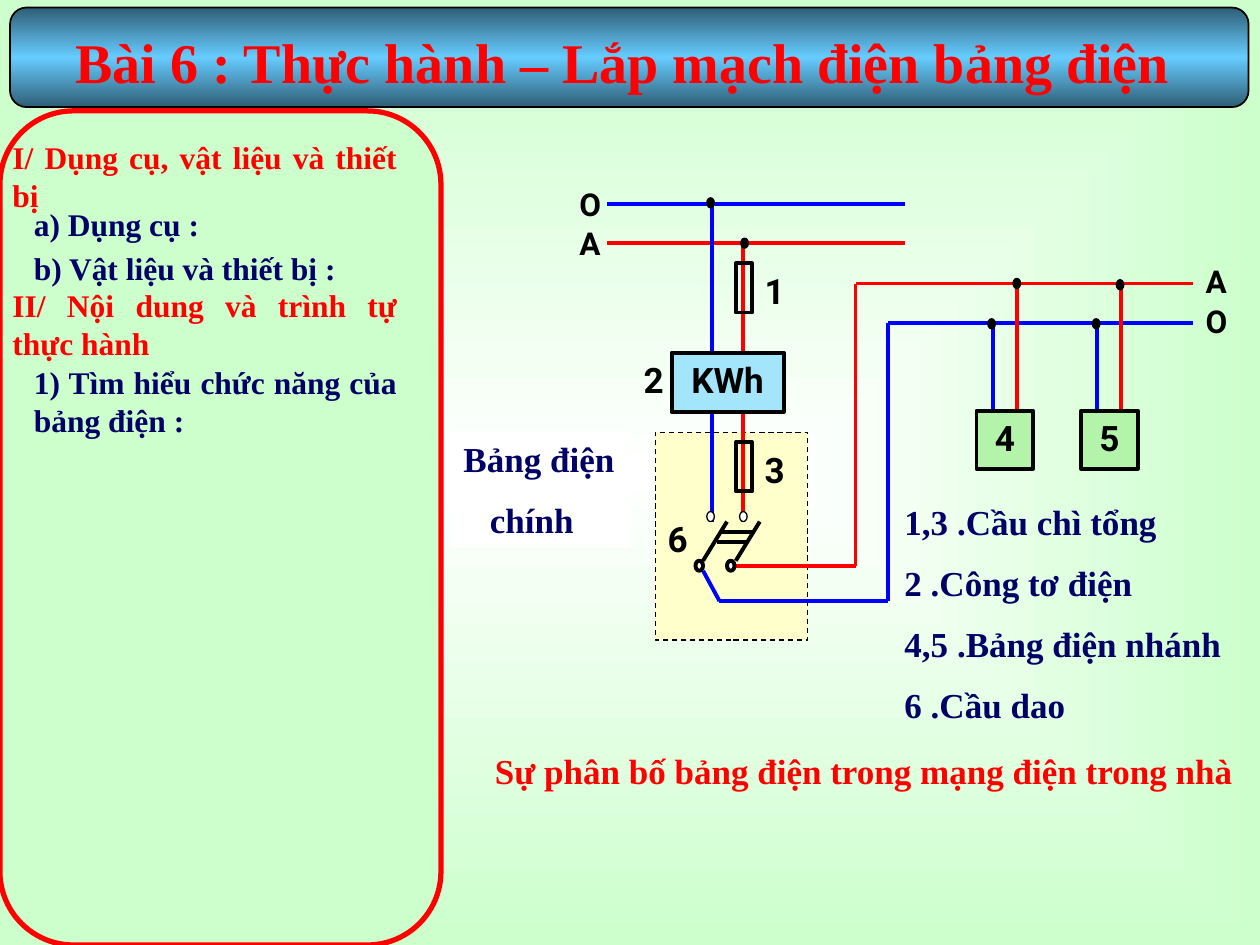
import copy
import pptx
import pptx.util
import pptx.dml.color
import pptx.enum.dml
import pptx.enum.shapes
import pptx.enum.text
import pptx.oxml.ns
from lxml import etree

RGBColor = pptx.dml.color.RGBColor
BLACK = RGBColor(0x00, 0x00, 0x00)
WHITE = RGBColor(0xFF, 0xFF, 0xFF)
RED = RGBColor(0xFF, 0x00, 0x00)
BLUE = RGBColor(0x00, 0x00, 0xFF)
NAVY = RGBColor(0x00, 0x00, 0x66)
PALE_GREEN = RGBColor(0xCC, 0xFF, 0xCC)
BRANCH_GREEN = RGBColor(0xB3, 0xF4, 0xAA)
METER_BLUE = RGBColor(0xA3, 0xE6, 0xFB)
BOARD_YELLOW = RGBColor(0xFF, 0xFF, 0xCC)
TITLE_DARK = RGBColor(0x2F, 0x5E, 0x76)
TITLE_LIGHT = RGBColor(0x66, 0xCC, 0xFF)
SERIF, SANS = "Times New Roman", "Roboto"
LEFT = pptx.enum.text.PP_ALIGN.LEFT
CENTER = pptx.enum.text.PP_ALIGN.CENTER
JUSTIFY = pptx.enum.text.PP_ALIGN.JUSTIFY
PRESET = pptx.enum.shapes.MSO_SHAPE

presentation = pptx.Presentation()
presentation.slide_width = pptx.util.Inches(10)
presentation.slide_height = pptx.util.Inches(7.5)
column = presentation.slide_width / 100
row = presentation.slide_height / 75
slide = presentation.slides.add_slide(presentation.slide_layouts[6])


def add_box(preset, left, top, width, height, fill, line, weight):
    shape = slide.shapes.add_shape(preset, int(left * column), int(top * row),
                                   int(width * column), int(height * row))
    shape.shadow.inherit = False
    if fill is None:
        shape.fill.background()
    else:
        shape.fill.solid()
        shape.fill.fore_color.rgb = fill
    shape.line.color.rgb = line
    shape.line.width = pptx.util.Pt(weight)
    return shape


def write(shape, lines, size, font, color, alignment=LEFT, indents=(0,)):
    frame = shape.text_frame
    frame.word_wrap = True
    frame.vertical_anchor = pptx.enum.text.MSO_ANCHOR.TOP
    for index, line in enumerate(lines):
        paragraph = frame.add_paragraph() if index else frame.paragraphs[0]
        paragraph.alignment = alignment
        paragraph.space_before = pptx.util.Pt(size * 0.55 if index else 0)
        indent = indents[index % len(indents)]
        if indent:
            paragraph._p.get_or_add_pPr().set("marL", str(int(indent * column)))
        run = paragraph.add_run()
        run.text = line
        run.font.size = pptx.util.Pt(size)
        run.font.name = font
        run.font.bold = True
        run.font.color.rgb = color


background = slide.background.fill
background.gradient()
for stop, color in zip(background.gradient_stops, (WHITE, PALE_GREEN)):
    stop.color.rgb = color
gradient = slide.background._cSld.find(".//" + pptx.oxml.ns.qn("a:gradFill"))
gradient.remove(gradient.find(pptx.oxml.ns.qn("a:lin")))
gradient_shape = etree.SubElement(gradient, pptx.oxml.ns.qn("a:path"))
gradient_shape.set("path", "shape")
center = etree.SubElement(gradient_shape, pptx.oxml.ns.qn("a:fillToRect"))
for side in "ltrb":
    center.set(side, "50000")

banner = add_box(PRESET.ROUNDED_RECTANGLE, 0.8, 0.6, 98.3, 7.9, TITLE_LIGHT, BLACK, 1)
banner.fill.gradient()
stop_list = banner._element.spPr.find(".//" + pptx.oxml.ns.qn("a:gsLst"))
stop_list.append(copy.deepcopy(stop_list[-1]))
for stop, color, position in zip(banner.fill.gradient_stops,
                                 (TITLE_DARK, TITLE_LIGHT, TITLE_DARK), (0, 0.5, 1)):
    stop.color.rgb = color
    stop.position = position
banner.fill.gradient_angle = 90
add_box(PRESET.ROUNDED_RECTANGLE, 0, 8.8, 35, 66.2, PALE_GREEN, RED, 3)

board = add_box(PRESET.RECTANGLE, 52, 34.3, 12.1, 16.5, BOARD_YELLOW, BLACK, 0.75)
board.line.dash_style = pptx.enum.dml.MSO_LINE.DASH

neutral, live = 56.5, 59
mains_neutral, mains_live = 16.2, 19.3
branch_live, branch_neutral = 22.5, 25.6
meter_top, meter_bottom = 28, 32.7
blade_top, blade_bottom = 41.4, 44.5
branch_lefts = (77.5, 85.8)
wires = [
    (BLUE, [(48.2, mains_neutral), (71.8, mains_neutral)]),
    (RED, [(48.2, mains_live), (71.8, mains_live)]),
    (BLUE, [(neutral, mains_neutral), (neutral, meter_top)]),
    (RED, [(live, mains_live), (live, meter_top)]),
    (BLUE, [(neutral, meter_bottom), (neutral, blade_top)]),
    (RED, [(live, meter_bottom), (live, blade_top)]),
    (BLACK, [(55.8, blade_bottom), (57.7, blade_top)]),
    (BLACK, [(58.4, blade_bottom), (60.3, blade_top)]),
    (BLACK, [(57.2, 42.2), (59.8, 42.2)]),
    (BLACK, [(56.9, 43), (59.4, 43)]),
    (RED, [(58.4, 44.9), (67.9, 44.9), (67.9, branch_live), (94.7, branch_live)]),
    (BLUE, [(55.8, 45.3), (57.1, 47.7), (70.5, 47.7),
            (70.5, branch_neutral), (94.7, branch_neutral)]),
]
for left in branch_lefts:
    wires.append((BLUE, [(left + 1.3, branch_neutral), (left + 1.3, meter_bottom)]))
    wires.append((RED, [(left + 3.2, branch_live), (left + 3.2, meter_bottom)]))
for color, points in wires:
    for start, end in zip(points, points[1:]):
        wire = slide.shapes.add_connector(
            pptx.enum.shapes.MSO_CONNECTOR.STRAIGHT,
            int(start[0] * column), int(start[1] * row),
            int(end[0] * column), int(end[1] * row))
        wire.line.color.rgb = color
        wire.line.width = pptx.util.Pt(2.25)
        etree.SubElement(wire._element.spPr, pptx.oxml.ns.qn("a:effectLst"))

meter = add_box(PRESET.RECTANGLE, 53.3, meter_top, 8.9, 4.7, METER_BLUE, BLACK, 2.25)
write(meter, ["KWh"], 20, SANS, BLACK, CENTER)
for number, left in zip("45", branch_lefts):
    branch = add_box(PRESET.RECTANGLE, left, 32.6, 4.5, 4.6, BRANCH_GREEN, BLACK, 2.25)
    write(branch, [number], 20, SANS, BLACK, CENTER)
for top in (20.9, 35.1):
    add_box(PRESET.RECTANGLE, 58.4, top, 1.3, 3.9, None, BLACK, 2.25)

dots = [
    (55.2, 44.5, WHITE, 2.25), (57.7, 44.5, WHITE, 2.25),
    (56.1, 40.6, WHITE, 0.75), (58.7, 40.6, WHITE, 0.75),
    (56.1, 15.7, BLACK, 0.75), (58.8, 18.9, BLACK, 0.75),
    (80.4, 22.1, BLACK, 0.75), (88.6, 22.2, BLACK, 0.75),
    (78.4, 25.3, BLACK, 0.75), (86.7, 25.3, BLACK, 0.75),
]
for left, top, fill, weight in dots:
    add_box(PRESET.OVAL, left, top, 0.6, 0.8, fill, BLACK, weight)

texts = [
    (1.7, 1.7, 98.3, 6.3, ["Bài 6 : Thực hành – Lắp mạch điện bảng điện"], 32, SERIF, RED, JUSTIFY, (3.3,)),
    (0, 10.5, 32.5, 7, ["I/ Dụng cụ, vật liệu và thiết bị"], 18, SERIF, RED, JUSTIFY),
    (1.7, 15.8, 21.7, 4, ["a) Dụng cụ :"], 18, SERIF, NAVY),
    (1.7, 19.3, 26.7, 4, ["b) Vật liệu và thiết bị :"], 18, SERIF, NAVY),
    (0, 22.2, 32.5, 7, ["II/ Nội dung và trình tự thực hành"], 18, SERIF, RED, JUSTIFY),
    (1.7, 28.3, 30.8, 7, ["1) Tìm hiểu chức năng của bảng điện :"], 18, SERIF, NAVY, JUSTIFY),
    (59.7, 20.9, 3.2, 4.3, ["1"], 20, SANS, BLACK),
    (50.1, 28, 3.8, 4.3, ["2"], 20, SANS, BLACK),
    (59.7, 35.1, 2.5, 4.3, ["3"], 20, SANS, BLACK),
    (52, 40.6, 3.8, 4.3, ["6"], 20, SANS, BLACK),
    (45, 14.2, 3.8, 4, ["O"], 18, SANS, BLACK),
    (45, 17.3, 4.5, 4, ["A"], 18, SANS, BLACK),
    (94.7, 20.3, 3.8, 4, ["A"], 18, SANS, BLACK),
    (94.7, 23.5, 4.5, 4, ["O"], 18, SANS, BLACK),
    (38.3, 59, 68.3, 4.3, ["Sự phân bố bảng điện trong mạng điện trong nhà"], 20, SERIF, RED),
    (35.8, 34.2, 14.2, 9.3, ["Bảng điện", "chính"], 20, SERIF, NAVY, JUSTIFY, (0, 2.1)),
    (70.8, 39.2, 29.2, 19.3, ["1,3 .Cầu chì tổng", "2 .Công tơ điện",
                              "4,5 .Bảng điện nhánh", "6 .Cầu dao"], 20, SERIF, NAVY),
]
for left, top, width, height, lines, *style in texts:
    text_box = slide.shapes.add_textbox(int(left * column), int(top * row),
                                        int(width * column), int(height * row))
    if lines[0] == "Bảng điện":
        text_box.fill.solid()
        text_box.fill.fore_color.rgb = WHITE
    write(text_box, lines, *style)

presentation.save("out.pptx")
